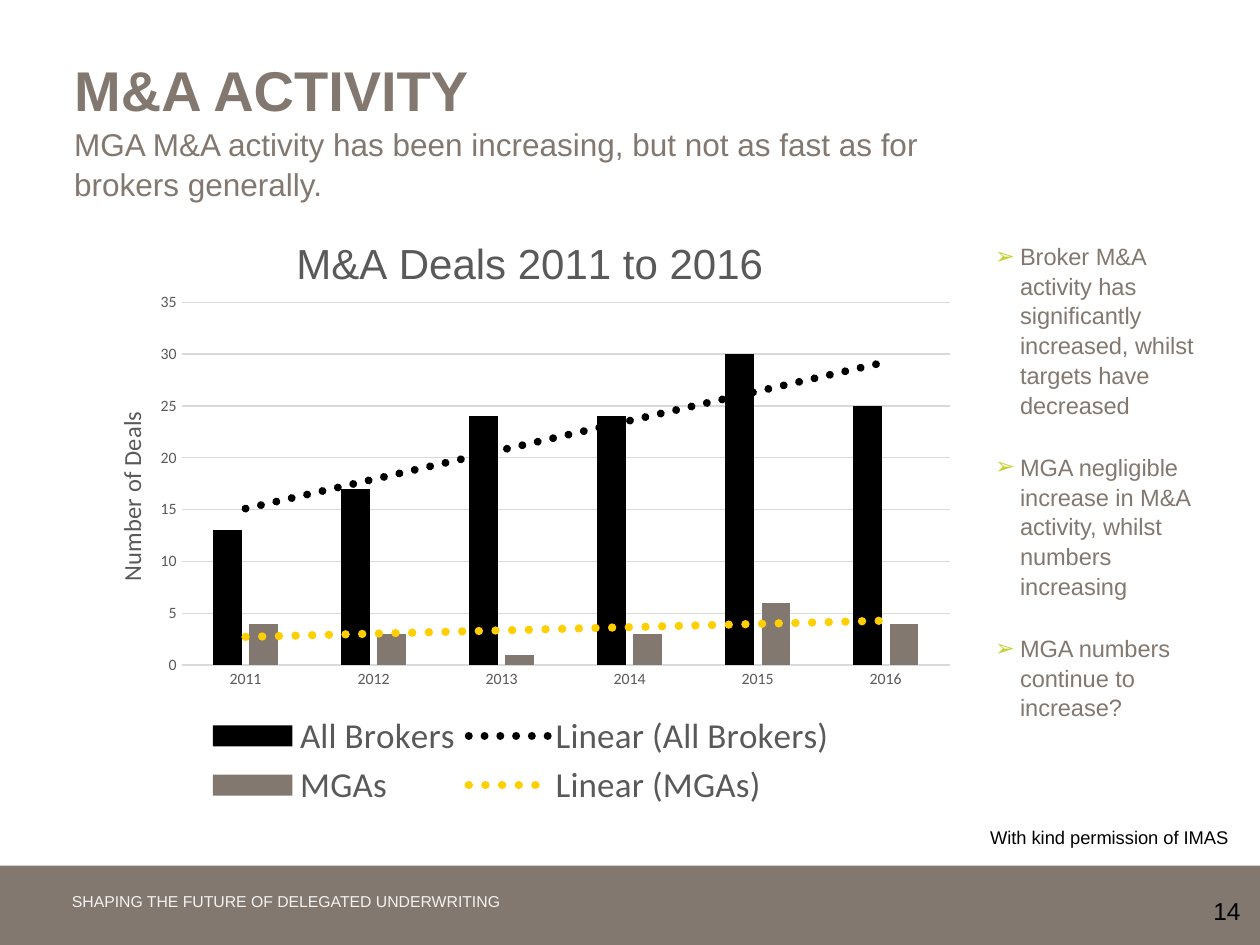
import lxml.etree
import pptx
import pptx.chart.data
import pptx.dml.color
import pptx.enum.chart
import pptx.enum.dml
import pptx.enum.shapes
import pptx.enum.text
import pptx.oxml
import pptx.oxml.ns
import pptx.util

Pt = pptx.util.Pt
qn = pptx.oxml.ns.qn
CHART_NS = pptx.oxml.ns.nsdecls("c", "a")
TAUPE, GREY, GRID, BLACK = "83786F", "595959", "D9D9D9", "000000"


def set_font(font, size, color, name="Arial", bold=False):
    font.size = Pt(size)
    font.name = name
    font.bold = bold
    font.color.rgb = pptx.dml.color.RGBColor.from_string(color)


def set_layout(element, index, **fractions):
    for old_layout in element.findall(qn("c:layout")):
        element.remove(old_layout)
    target = '<c:layoutTarget val="inner"/>' if element.tag == qn("c:plotArea") else ""
    modes = '<c:xMode val="edge"/><c:yMode val="edge"/>'
    values = "".join(f'<c:{key} val="{value}"/>' for key, value in fractions.items())
    element.insert(index, pptx.oxml.parse_xml(
        f"<c:layout {CHART_NS}><c:manualLayout>{target}{modes}{values}</c:manualLayout></c:layout>"))


presentation = pptx.Presentation()
presentation.slide_width = Pt(720)
presentation.slide_height = Pt(540)
slide = presentation.slides.add_slide(presentation.slide_layouts[5])

band = slide.shapes.add_shape(
    pptx.enum.shapes.MSO_SHAPE.RECTANGLE, Pt(0), Pt(494.64), Pt(720), Pt(45.36))
band.shadow.inherit = False
band.fill.solid()
band.fill.fore_color.rgb = pptx.dml.color.RGBColor.from_string(TAUPE)
band.line.fill.background()

title = slide.shapes.title
title.left, title.top, title.width, title.height = Pt(28), Pt(26), Pt(508), Pt(57)
frame = title.text_frame
frame.auto_size = pptx.enum.text.MSO_AUTO_SIZE.NONE
frame.vertical_anchor = pptx.enum.text.MSO_ANCHOR.TOP
frame.word_wrap = True
frame.margin_left = Pt(14.4)
paragraph = frame.paragraphs[0]
paragraph.alignment = pptx.enum.text.PP_ALIGN.LEFT
paragraph.line_spacing = 1.06
run = paragraph.add_run()
run.text = "M&A ACTIVITY"
set_font(run.font, 32, TAUPE, bold=True)
paragraph.add_line_break()
run = paragraph.add_run()
run.text = "MGA M&A activity has been increasing, but not as fast as for brokers generally."
set_font(run.font, 18, TAUPE)

chart_data = pptx.chart.data.CategoryChartData()
chart_data.categories = ["2011", "2012", "2013", "2014", "2015", "2016"]
chart_data.add_series("All Brokers", [13, 17, 24, 24, 30, 25])
chart_data.add_series("MGAs", [4, 3, 1, 3, 6, 4])
chart = slide.shapes.add_chart(
    pptx.enum.chart.XL_CHART_TYPE.COLUMN_CLUSTERED,
    Pt(42.5), Pt(116.6), Pt(510.5), Pt(351.4), chart_data).chart
set_font(chart.font, 10, BLACK, "Calibri")
chart.has_title = True
value_axis, category_axis = chart.value_axis, chart.category_axis
value_axis.has_title = True
for heading, text, size, name, left, top in (
        (chart.chart_title, "M&A Deals 2011 to 2016", 24, "Arial", 0.24, 0.04),
        (value_axis.axis_title, "Number of Deals", 14, "Calibri", 0.04, 0.33)):
    run = heading.text_frame.paragraphs[0].add_run()
    run.text = text
    set_font(run.font, size, GREY, name)
    set_layout(heading._element, 1, x=left, y=top)
value_axis.axis_title.text_frame._txBody.bodyPr.set("rot", "-5400000")

for axis in (value_axis, category_axis):
    axis.major_tick_mark = pptx.enum.chart.XL_TICK_MARK.NONE
    axis.minor_tick_mark = pptx.enum.chart.XL_TICK_MARK.NONE
    set_font(axis.tick_labels.font, 9, GREY, "Calibri")
value_axis.minimum_scale = 0
value_axis.maximum_scale = 35
value_axis.major_unit = 5
value_axis.format.line.fill.background()
for line in (value_axis.major_gridlines.format.line, category_axis.format.line):
    line.color.rgb = pptx.dml.color.RGBColor.from_string(GRID)
    line.width = Pt(0.75)

plot = chart.plots[0]
plot.vary_by_categories = False
plot.gap_width = 219
plot.overlap = -27
for series, fill, trend_color, trend_width in zip(
        plot.series, (BLACK, TAUPE), (BLACK, "FFCF01"), (4.5, 4.75)):
    series.format.fill.solid()
    series.format.fill.fore_color.rgb = pptx.dml.color.RGBColor.from_string(fill)
    series._element.find(qn("c:cat")).addprevious(pptx.oxml.parse_xml(
        f'<c:trendline {CHART_NS}><c:spPr><a:ln w="{Pt(trend_width)}" cap="rnd">'
        f'<a:solidFill><a:srgbClr val="{trend_color}"/></a:solidFill><a:prstDash val="sysDot"/>'
        '</a:ln></c:spPr><c:trendlineType val="linear"/><c:dispRSqr val="0"/>'
        '<c:dispEq val="0"/></c:trendline>'))

chart.has_legend = True
chart.legend.position = pptx.enum.chart.XL_LEGEND_POSITION.BOTTOM
chart.legend.include_in_layout = False
set_font(chart.legend.font, 20, GREY, "Calibri")
set_layout(chart.legend._element, 1, x=0.14, y=0.82, w=0.72, h=0.17)
set_layout(chart._chartSpace.chart.plotArea, 0, x=0.12, y=0.16, w=0.86, h=0.59)

comments = slide.shapes.add_textbox(Pt(547.2), Pt(133.9), Pt(147.6), Pt(273.6))
comments.text_frame.word_wrap = True
for index, text in enumerate((
        "Broker M&A activity has significantly increased, whilst targets have decreased",
        "MGA negligible increase in M&A activity, whilst numbers increasing",
        "MGA numbers continue to increase?")):
    frame = comments.text_frame
    paragraph = frame.add_paragraph() if index else frame.paragraphs[0]
    properties = paragraph._p.get_or_add_pPr()
    properties.set("marL", str(Pt(28.6)))
    properties.set("indent", str(Pt(-14.2)))
    bullet_color = lxml.etree.SubElement(properties, qn("a:buClr"))
    lxml.etree.SubElement(bullet_color, qn("a:srgbClr"), val="C2D22D")
    lxml.etree.SubElement(properties, qn("a:buFont"), typeface="Arial")
    lxml.etree.SubElement(properties, qn("a:buChar"), char="➢")
    paragraph.line_spacing = 1.05
    if index:
        paragraph.space_before = Pt(18.6)
    run = paragraph.add_run()
    run.text = text
    set_font(run.font, 13.5, TAUPE)

for text, left, top, width, height, size, color in (
        ("14", 686.2, 508.3, 36.7, 24.5, 14, BLACK),
        ("SHAPING THE FUTURE OF DELEGATED UNDERWRITING", 34, 506, 652, 28, 9, "F2F2F2"),
        ("With kind permission of IMAS", 558.7, 468.7, 160, 20.2, 10.5, BLACK)):
    label = slide.shapes.add_textbox(Pt(left), Pt(top), Pt(width), Pt(height))
    label.text_frame.word_wrap = True
    run = label.text_frame.paragraphs[0].add_run()
    run.text = text
    set_font(run.font, size, color)

presentation.save("out.pptx")
